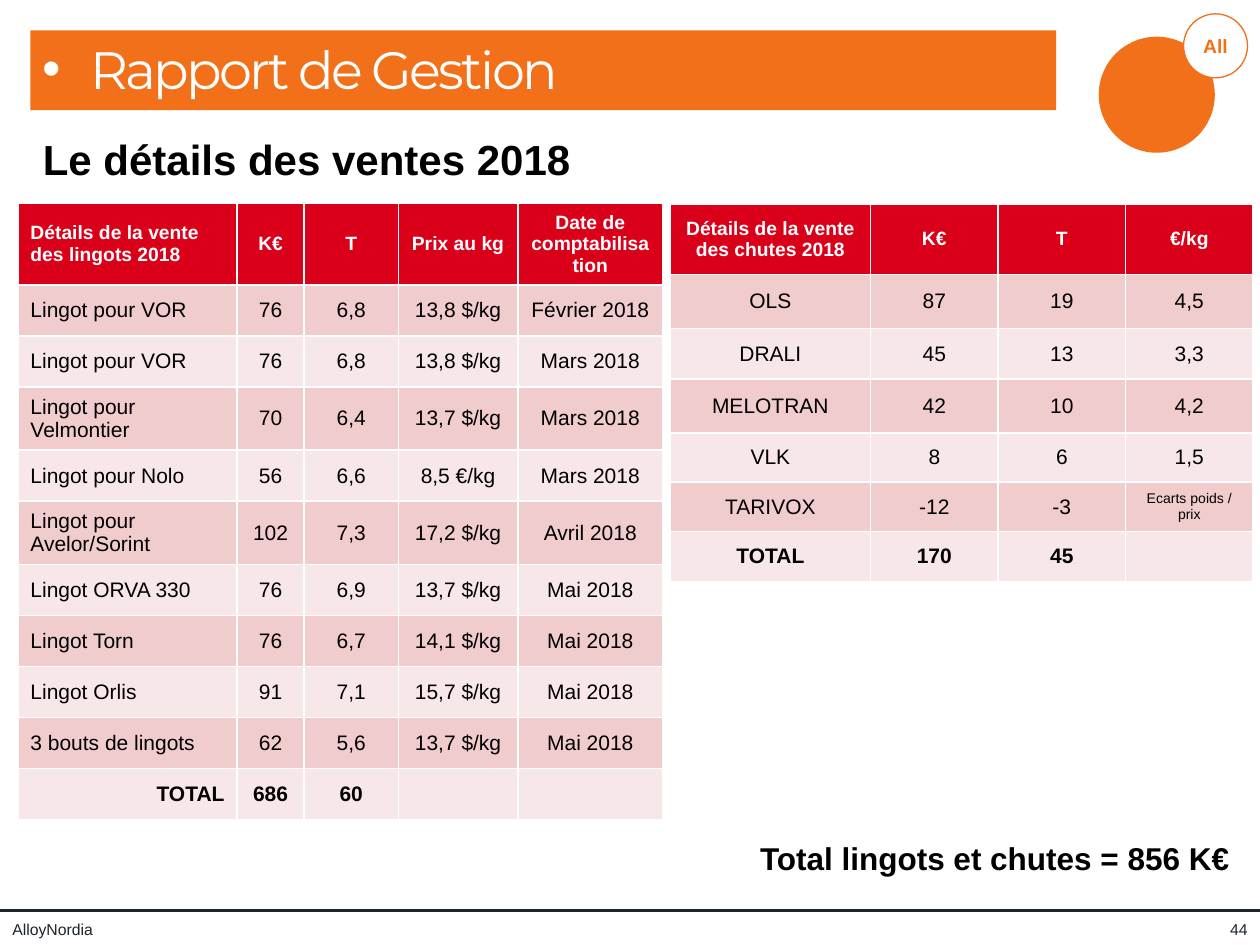
"""Build the 2018 sales details slide with its two tables and grand total."""
from lxml import etree
from pptx import Presentation
from pptx import util as u
from pptx.dml.color import RGBColor
from pptx.enum import shapes, text
from pptx.oxml.ns import qn

ORANGE, INK, WHITE, BLACK = "F27019", "1D252B", "FFFFFF", "000000"
RED, BANDS = "DB001A", ("F1CCCD", "F8E7E8")
LEFT, CENTER, RIGHT = text.PP_ALIGN.LEFT, text.PP_ALIGN.CENTER, text.PP_ALIGN.RIGHT
TOP, MIDDLE = text.MSO_ANCHOR.TOP, text.MSO_ANCHOR.MIDDLE


def color(value):
    """Turn a hex string into a colour."""
    return RGBColor.from_string(value)


def write(frame, words, size, ink, align=LEFT, bold=False, anchor=MIDDLE, name="Arial"):
    """Put one formatted run into a text frame and return it."""
    para = frame.paragraphs[0]
    para.alignment = align
    frame.vertical_anchor = anchor
    span = para.add_run()
    span.text = words
    for key, value in {"name": name, "size": u.Pt(size), "bold": bold}.items():
        setattr(span.font, key, value)
    span.font.color.rgb = color(ink)
    return span


deck = Presentation()
deck.slide_width, deck.slide_height = u.Cm(25.4), u.Cm(19.05)
page = deck.slides.add_slide(deck.slide_layouts[1])
heading, banner = page.placeholders[0], page.placeholders[1]

placements = (
    (banner, (0.61, 0.61, 20.68, 1.55)),
    (heading, (0.61, 2.57, 11.48, 1.27)),
)
for holder, place in placements:
    for key, value in zip(("left", "top", "width", "height"), place):
        setattr(holder, key, u.Cm(value))
    holder.text_frame.auto_size = text.MSO_AUTO_SIZE.SHAPE_TO_FIT_TEXT

banner.fill.solid()
banner.fill.fore_color.rgb = color(ORANGE)
banner.text_frame.paragraphs[0].space_before = u.Pt(0)
banner_span = write(banner.text_frame, "Rapport de Gestion", 30, WHITE,
                    anchor=TOP, name="Montserrat")
banner_span.font._element.set("spc", "-150")
heading.text_frame.word_wrap = False
write(heading.text_frame, "Le détails des ventes 2018", 24, BLACK, bold=True, anchor=TOP)

rule = page.shapes.add_connector(shapes.MSO_CONNECTOR.STRAIGHT,
                                 u.Cm(0), u.Cm(18.36), u.Cm(25.4), u.Cm(18.36))
rule.line.color.rgb = color(INK)
rule.line.width = u.Pt(1.5)
etree.SubElement(rule._element.spPr, qn("a:effectLst"))

circles = []
for left, top, size, fill in ((22.15, 0.74, 2.34, ORANGE), (23.86, 0.28, 1.29, WHITE)):
    circle = page.shapes.add_shape(shapes.MSO_SHAPE.OVAL, *map(u.Cm, (left, top, size, size)))
    circle.shadow.inherit = False
    circle.fill.solid()
    circle.fill.fore_color.rgb = color(fill)
    circle.line.color.rgb = color(ORANGE)
    circle.line.width = u.Pt(0.75)
    circles.append(circle)
disc, badge = circles
disc.line.fill.background()
badge.text_frame.margin_left = badge.text_frame.margin_right = 0
write(badge.text_frame, "All", 11, ORANGE, CENTER, True)

labels = (
    ("AlloyNordia", (0, 18.42, 8.74, 0.63), 9, INK, LEFT, False, MIDDLE),
    ("44", (24.16, 18.42, 1.24, 0.63), 9, INK, RIGHT, False, MIDDLE),
    ("Total lingots et chutes = 856 K€", (14.71, 16.79, 10.69, 1.02),
     18, BLACK, CENTER, True, TOP),
)
for words, place, *style in labels:
    box = page.shapes.add_textbox(*map(u.Cm, place))
    box.text_frame.word_wrap = True
    write(box.text_frame, words, *style)

ingots = (
    ("Détails de la vente des lingots 2018", "K€", "T", "Prix au kg", "Date de comptabilisation"),
    ("Lingot pour VOR", "76", "6,8", "13,8 $/kg", "Février 2018"),
    ("Lingot pour VOR", "76", "6,8", "13,8 $/kg", "Mars 2018"),
    ("Lingot pour Velmontier", "70", "6,4", "13,7 $/kg", "Mars 2018"),
    ("Lingot pour Nolo", "56", "6,6", "8,5 €/kg", "Mars 2018"),
    ("Lingot pour Avelor/Sorint", "102", "7,3", "17,2 $/kg", "Avril 2018"),
    ("Lingot ORVA 330", "76", "6,9", "13,7 $/kg", "Mai 2018"),
    ("Lingot Torn", "76", "6,7", "14,1 $/kg", "Mai 2018"),
    ("Lingot Orlis", "91", "7,1", "15,7 $/kg", "Mai 2018"),
    ("3 bouts de lingots", "62", "5,6", "13,7 $/kg", "Mai 2018"),
    ("TOTAL", "686", "60", "", ""),
)
scraps = (
    ("Détails de la vente des chutes 2018", "K€", "T", "€/kg"),
    ("OLS", "87", "19", "4,5"),
    ("DRALI", "45", "13", "3,3"),
    ("MELOTRAN", "42", "10", "4,2"),
    ("VLK", "8", "6", "1,5"),
    ("TARIVOX", "-12", "-3", "Ecarts poids / prix"),
    ("TOTAL", "170", "45", ""),
)
tables = (
    (ingots, 0.36, 4.09, (4.42, 1.35, 1.9, 2.41, 2.92), (1.45, *[1.03] * 10), LEFT, RIGHT),
    (scraps, 13.51, 4.11, (4.04, *[2.57] * 3), (1.42, 1.09, 1.02, 1.09, *[0.99] * 3),
     CENTER, CENTER),
)
for rows, left, top, widths, heights, name_align, total_align in tables:
    place = map(u.Cm, (left, top, sum(widths), sum(heights)))
    grid = page.shapes.add_table(len(rows), len(widths), *place).table
    for column, width in zip(grid.columns, widths):
        column.width = u.Cm(width)
    for r, (row, height) in enumerate(zip(rows, heights)):
        grid.rows[r].height = u.Cm(height)
        header, total = r == 0, row[0] == "TOTAL"
        for c, words in enumerate(row):
            cell = grid.cell(r, c)
            cell.fill.solid()
            cell.fill.fore_color.rgb = color(RED if header else BANDS[(r - 1) % 2])
            cell.vertical_anchor = MIDDLE
            if not words:
                continue
            align = CENTER if c else total_align if total else name_align
            size = 11 if header else 8 if words.startswith("Ecarts") else 12
            write(cell.text_frame, words, size, WHITE if header else BLACK,
                  align, header or total)

deck.save("out.pptx")
